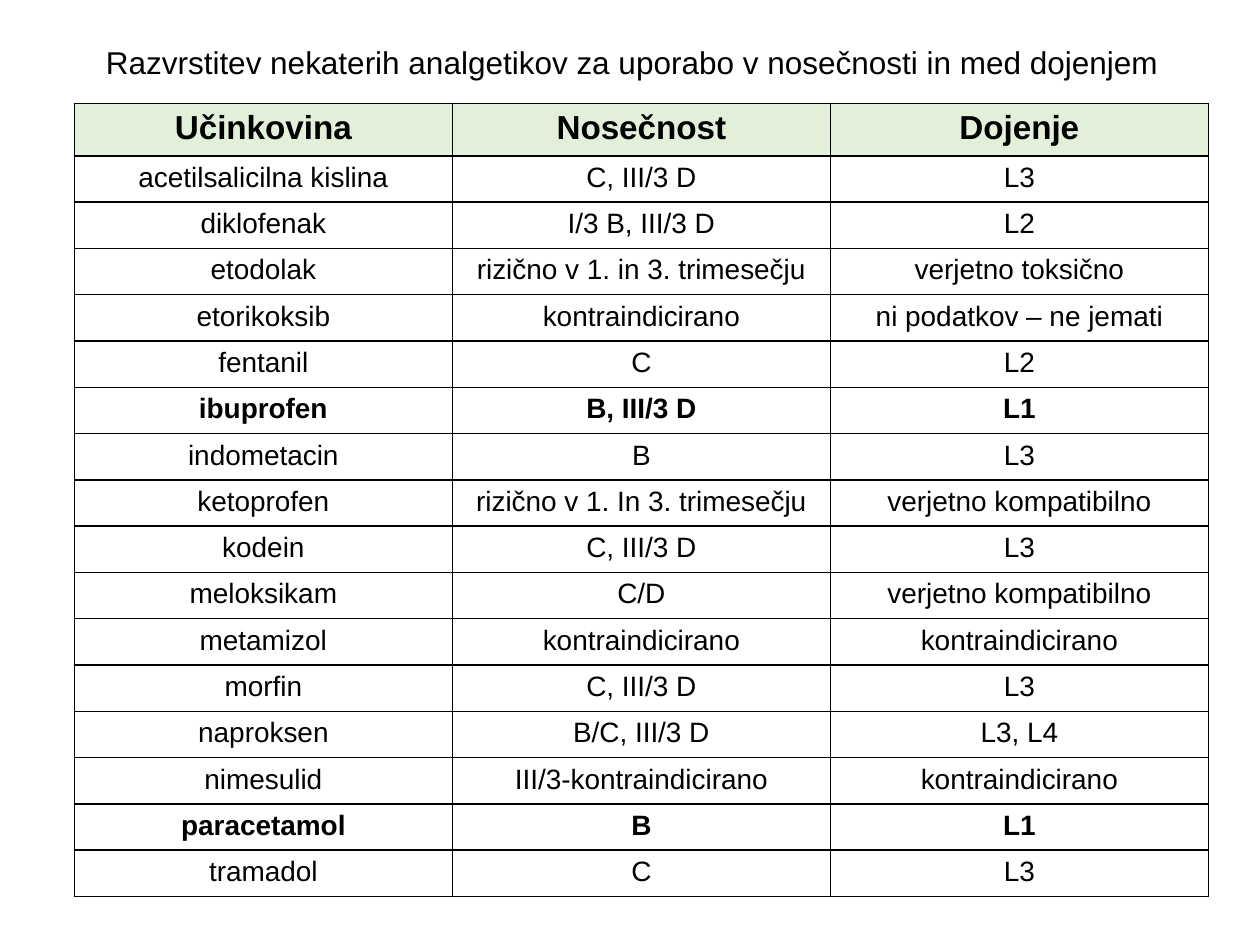
from pptx import Presentation
from pptx.dml.color import RGBColor as RGB
from pptx.enum.text import MSO_ANCHOR as Anchor, MSO_AUTO_SIZE as Fit, PP_ALIGN as Align
from pptx.oxml.ns import qn
from pptx.util import Inches, Pt
from lxml.etree import SubElement as Sub

# Content
TITLE = "Razvrstitev nekaterih analgetikov za uporabo v nosečnosti in med dojenjem"
HEAD = ("Učinkovina", "Nosečnost", "Dojenje")
DRUGS = [
    ("acetilsalicilna kislina", "C, III/3 D", "L3"),
    ("diklofenak", "I/3 B, III/3 D", "L2"),
    ("etodolak", "rizično v 1. in 3. trimesečju", "verjetno toksično"),
    ("etorikoksib", "kontraindicirano", "ni podatkov – ne jemati"),
    ("fentanil", "C", "L2"),
    ("ibuprofen", "B, III/3 D", "L1"),
    ("indometacin", "B", "L3"),
    ("ketoprofen", "rizično v 1. In 3. trimesečju", "verjetno kompatibilno"),
    ("kodein", "C, III/3 D", "L3"),
    ("meloksikam", "C/D", "verjetno kompatibilno"),
    ("metamizol", "kontraindicirano", "kontraindicirano"),
    ("morfin", "C, III/3 D", "L3"),
    ("naproksen", "B/C, III/3 D", "L3, L4"),
    ("nimesulid", "III/3-kontraindicirano", "kontraindicirano"),
    ("paracetamol", "B", "L1"),
    ("tramadol", "C", "L3"),
]
SAFE = {"ibuprofen", "paracetamol"}

THEME = {
    "font": "Arial", "ink": "000000", "head": "E2F0D9", "body": "FFFFFF",
    "title_pt": 18, "head_pt": 19, "body_pt": 16, "line_pt": 1,
}

# Layout
LEFT, TOP, WIDTH = Inches(0.59), Inches(0.82), Inches(9)
HEAD_H, LAST_H = Inches(0.41), Inches(0.35)
ROW_H = Inches(5.51) // (len(DRUGS) - 1)
HANG = Inches(0.38)


def write(para, text, size, bold=False):
    run = para.add_run()
    run.text = text
    font = run.font
    font.name, font.size, font.bold = THEME["font"], Pt(size), bold
    font.color.rgb = RGB.from_string(THEME["ink"])


def border(cell):
    props = cell._tc.get_or_add_tcPr()
    for at, side in enumerate(("lnL", "lnR", "lnT", "lnB")):
        line = Sub(props, qn("a:" + side), w=str(Pt(THEME["line_pt"])))
        fill = Sub(line, qn("a:solidFill"))
        Sub(fill, qn("a:srgbClr"), val=THEME["ink"])
        props.insert(at, line)  # borders come before the fill


def style(cell, text, part, bold):
    cell.fill.solid()
    cell.fill.fore_color.rgb = RGB.from_string(THEME[part])
    border(cell)
    para = cell.text_frame.paragraphs[0]
    para.alignment = Align.CENTER
    props = para._p.get_or_add_pPr()
    props.set("marL", str(HANG))
    props.set("indent", str(-HANG))
    write(para, text, THEME[part + "_pt"], bold)


def add_title(slide):
    title = slide.shapes.title
    title.left, title.top = Inches(0.74), Inches(0.29)
    title.width, title.height = Inches(8.7), Inches(0.4)
    frame = title.text_frame
    frame.word_wrap = False
    frame.auto_size = Fit.SHAPE_TO_FIT_TEXT
    frame.vertical_anchor = Anchor.TOP
    para = frame.paragraphs[0]
    para.alignment = Align.LEFT
    write(para, TITLE, THEME["title_pt"])


def add_drugs(slide):
    rows = [HEAD] + DRUGS
    highs = [HEAD_H] + [ROW_H] * (len(DRUGS) - 1) + [LAST_H]
    table = slide.shapes.add_table(
        len(rows), len(HEAD), LEFT, TOP, WIDTH, sum(highs)).table
    table.horz_banding = False
    for r, (row, high) in enumerate(zip(rows, highs)):
        table.rows[r].height = high
        part = "body" if r else "head"
        bold = r == 0 or row[0] in SAFE
        for c, text in enumerate(row):
            style(table.cell(r, c), text, part, bold)


def main():
    deck = Presentation()
    deck.slide_width, deck.slide_height = Inches(10), Inches(7.5)
    slide = deck.slides.add_slide(deck.slide_layouts[5])
    add_title(slide)
    add_drugs(slide)
    deck.save("out.pptx")


if __name__ == "__main__":
    main()
